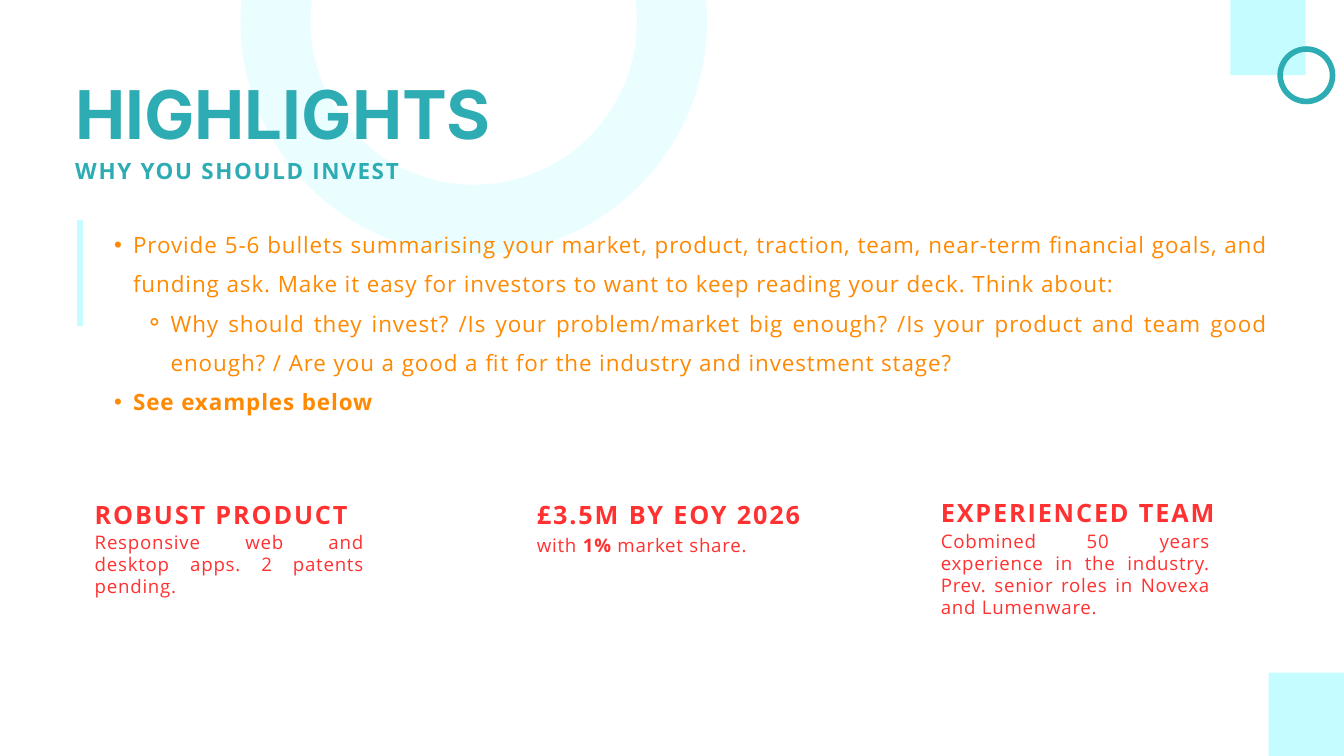
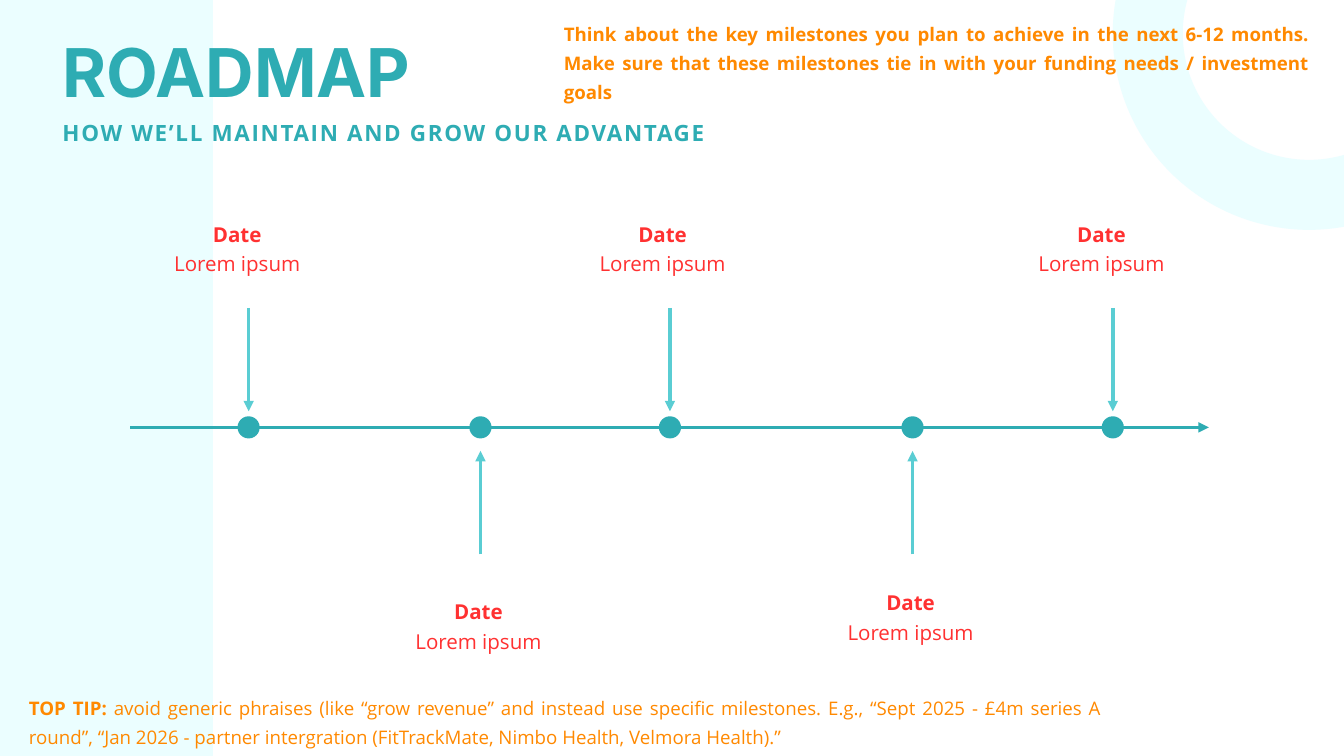
from lxml import etree
from pptx import Presentation
from pptx.dml.color import RGBColor
from pptx.enum.shapes import MSO_CONNECTOR, MSO_SHAPE
from pptx.enum.text import MSO_ANCHOR, MSO_AUTO_SIZE, PP_ALIGN
from pptx.oxml.ns import qn
from pptx.util import Inches, Pt

WIDTH, HEIGHT = 20, 11.25
TITLE_ONLY = 5

TEAL = RGBColor(0x2E, 0xAC, 0xB3)
AQUA = RGBColor(0x5A, 0xCD, 0xD3)
PALE = RGBColor(0xC5, 0xFC, 0xFF)
MIST = RGBColor(0xEB, 0xFE, 0xFF)
ORANGE = RGBColor(0xFF, 0x89, 0x00)
RED = RGBColor(0xFF, 0x31, 0x31)

# Text styles: size, colour, line spacing, letter spacing (points), alignment
LEFT, JUSTIFY, CENTER = PP_ALIGN.LEFT, PP_ALIGN.JUSTIFY, PP_ALIGN.CENTER
TITLE = dict(size=72, color=TEAL, leading=75.6, font="Inter")
SUBTITLE = dict(size=24, color=TEAL, leading=33.6, spacing=1.8)
GUIDE = dict(size=24, color=ORANGE, leading=42.2, spacing=1, align=JUSTIFY)
HEADING = dict(size=27, color=RED, leading=37.8, spacing=2)
DETAIL = dict(size=20, color=RED, leading=23.6, spacing=0.8, align=JUSTIFY)
MILESTONE = dict(size=22, color=RED, leading=31.9, align=CENTER)
TIP = dict(size=20, color=ORANGE, leading=31, align=JUSTIFY)

# Paragraphs are lists of (text, bold) runs
GUIDANCE = [
    (1, [("Provide 5-6 bullets summarising your market, product, traction, team, "
          "near-term financial goals, and funding ask. Make it easy for investors "
          "to want to keep reading your deck. Think about:", False)]),
    (2, [("Why should they invest? /Is your problem/market big enough? /Is your "
          "product and team good enough? / Are you a good a fit for the industry "
          "and investment stage?", False)]),
    (1, [("See examples below", True)]),
]
BULLETS = {1: ("•", 0.57, 0.28), 2: ("⚬", 1.13, 0.38)}  # sign, margin, hanging

# Left, heading top, detail offset, detail width, heading, detail
HIGHLIGHTS = [
    (1.41, 7.35, 0.56, 4.01, "ROBUST PRODUCT",
     [("Responsive web and desktop apps. 2 patents pending.", False)]),
    (7.99, 7.35, 0.6, 3.79, "£3.5M BY EOY 2026",
     [("with ", False), ("1%", True), (" market share.", False)]),
    (14, 7.33, 0.56, 4.01, "EXPERIENCED TEAM",
     [("Cobmined 50 years experience in the industry. Prev. senior roles in "
       "Novexa and Lumenware.", False)]),
]

# Position on the axis, label left, label top, date, text
MILESTONES = [
    (3.7, 1.28, 3.22, "Date", "Lorem ipsum"),
    (7.15, 4.87, 8.84, "Date", "Lorem ipsum"),
    (9.97, 7.61, 3.22, "Date", "Lorem ipsum"),
    (13.58, 11.3, 8.71, "Date", "Lorem ipsum"),
    (16.56, 14.14, 3.22, "Date", "Lorem ipsum"),
]
AXIS_Y, AXIS_START, AXIS_END = 6.36, 1.94, 17.99
DOT = 0.33
ARROW = 1.54
GAP_ABOVE, GAP_BELOW = 0.24, 0.35
LABEL_W, LABEL_H = 4.5, 0.85

MILESTONE_ADVICE = [
    ("Think about the key milestones you plan to achieve in the next 6-12 months. "
     "Make sure that these milestones tie in with your funding needs / investment "
     "goals", True)]
TOP_TIP = [
    ("TOP TIP:", True),
    (" avoid generic phraises (like “grow revenue” and instead use specific "
     "milestones. E.g., “Sept 2025 - £4m series A round”, “Jan 2026 - partner "
     "intergration (FitTrackMate, Nimbo Health, Velmora Health).”", False)]


def box(*lengths):
    return [Inches(n) for n in lengths]


def write(tf, paragraphs, size, color, leading, font="Open Sans", spacing=0,
          align=LEFT):
    """Fill a text frame with paragraphs of (text, bold) runs in one style."""
    tf.word_wrap = True
    tf.auto_size = MSO_AUTO_SIZE.NONE
    tf.vertical_anchor = MSO_ANCHOR.TOP
    tf.margin_left = tf.margin_right = tf.margin_top = tf.margin_bottom = 0
    for i, runs in enumerate(paragraphs):
        p = tf.add_paragraph() if i else tf.paragraphs[0]
        p.alignment = align
        p.line_spacing = Pt(leading)
        p.space_before = p.space_after = Pt(0)
        for text, bold in runs:
            r = p.add_run()
            r.text = text
            r.font.name, r.font.size, r.font.bold = font, Pt(size), bold
            r.font.color.rgb = color
            if spacing:
                r._r.get_or_add_rPr().set("spc", str(round(spacing * 100)))


def add_text(slide, place, paragraphs, style):
    tf = slide.shapes.add_textbox(*box(*place)).text_frame
    write(tf, paragraphs, **style)
    return tf


def add_bullet(p, level):
    sign, margin, hanging = BULLETS[level]
    p.level = level
    pPr = p._p.get_or_add_pPr()
    pPr.set("marL", str(Inches(margin)))
    pPr.set("indent", str(-Inches(hanging)))
    etree.SubElement(pPr, qn("a:buFont")).set("typeface", "Arial")
    etree.SubElement(pPr, qn("a:buChar")).set("char", sign)


def add_filled(slide, kind, place, color):
    s = slide.shapes.add_shape(kind, *box(*place))
    s.shadow.inherit = False
    s.fill.solid()
    s.fill.fore_color.rgb = color
    s.line.fill.background()


def add_ring(slide, x, y, radius, color, weight):
    s = slide.shapes.add_shape(
        MSO_SHAPE.OVAL, *box(x - radius, y - radius, 2 * radius, 2 * radius))
    s.shadow.inherit = False
    s.fill.background()
    s.line.color.rgb, s.line.width = color, Pt(weight)


def add_line(slide, x1, y1, x2, y2, color, weight, arrow=False):
    c = slide.shapes.add_connector(MSO_CONNECTOR.STRAIGHT, *box(x1, y1, x2, y2))
    c.line.color.rgb, c.line.width = color, Pt(weight)
    if arrow:
        ln = c.line._get_or_add_ln()
        etree.SubElement(ln, qn("a:tailEnd")).set("type", "triangle")
    etree.SubElement(c._element.spPr, qn("a:effectLst"))


def add_titles(slide, left, top, title, subtitle, subtitle_top, subtitle_width):
    """Write the title in its placeholder, above the shapes drawn so far."""
    s = slide.shapes.title
    s.left, s.top, s.width, s.height = box(left, top, 10.4, 1.09)
    write(s.text_frame, [[(title, True)]], **TITLE)
    slide.shapes._spTree.append(s._element)
    add_text(slide, (left, subtitle_top, subtitle_width, 0.43),
             [[(subtitle, True)]], SUBTITLE)


def build_highlights(slide):
    square_w, square_h = 1.12, 1.24
    for x, y in ((WIDTH - square_w, HEIGHT - square_h), (18.31, -0.12)):
        add_filled(slide, MSO_SHAPE.RECTANGLE, (x, y, square_w, square_h), PALE)
    add_ring(slide, 7.05, 0.32, 2.95, MIST, 75)
    add_titles(slide, 1.12, 1.23, "HIGHLIGHTS", "WHY YOU SHOULD INVEST", 2.27, 7.46)
    add_line(slide, 1.19, 3.27, 1.19, 4.85, PALE, 6)

    tf = add_text(slide, (1.41, 3.25, 17.47, 3.45),
                  [runs for _, runs in GUIDANCE], GUIDE)
    for p, (level, _) in zip(tf.paragraphs, GUIDANCE):
        add_bullet(p, level)
    add_ring(slide, 19.44, 1.12, 0.39, TEAL, 6)

    for left, top, offset, width, heading, detail in HIGHLIGHTS:
        add_text(slide, (left, top, 4.31, 0.49), [[(heading, True)]], HEADING)
        add_text(slide, (left, top + offset, width, 0.65), [detail], DETAIL)


def build_roadmap(slide):
    add_ring(slide, 19.48, 0.5, 2.4, MIST, 75)
    add_filled(slide, MSO_SHAPE.RECTANGLE, (0, 0, 3.17, HEIGHT), MIST)
    add_line(slide, AXIS_START, AXIS_Y, AXIS_END, AXIS_Y, TEAL, 3.75, arrow=True)
    add_titles(slide, 0.93, 0.6, "ROADMAP",
               "HOW WE’LL MAINTAIN AND GROW OUR ADVANTAGE", 1.7, 12.39)

    for x, left, top, date, text in MILESTONES:
        tip = AXIS_Y - GAP_ABOVE if top < AXIS_Y else AXIS_Y + GAP_BELOW
        start = tip - ARROW if top < AXIS_Y else tip + ARROW
        add_line(slide, x, start, x, tip, AQUA, 3.75, arrow=True)
        add_filled(slide, MSO_SHAPE.OVAL,
                   (x - DOT / 2, AXIS_Y - DOT / 2, DOT, DOT), TEAL)
        add_text(slide, (left, top, LABEL_W, LABEL_H),
                 [[(date, True)], [(text, False)]], MILESTONE)

    add_text(slide, (8.39, 0.24, 11.09, 0.83), [MILESTONE_ADVICE], TIP)
    add_text(slide, (0.43, 10.27, 15.96, 0.83), [TOP_TIP], TIP)


def main():
    prs = Presentation()
    prs.slide_width, prs.slide_height = box(WIDTH, HEIGHT)
    for build in (build_highlights, build_roadmap):
        build(prs.slides.add_slide(prs.slide_layouts[TITLE_ONLY]))
    prs.save("out.pptx")


if __name__ == "__main__":
    main()
